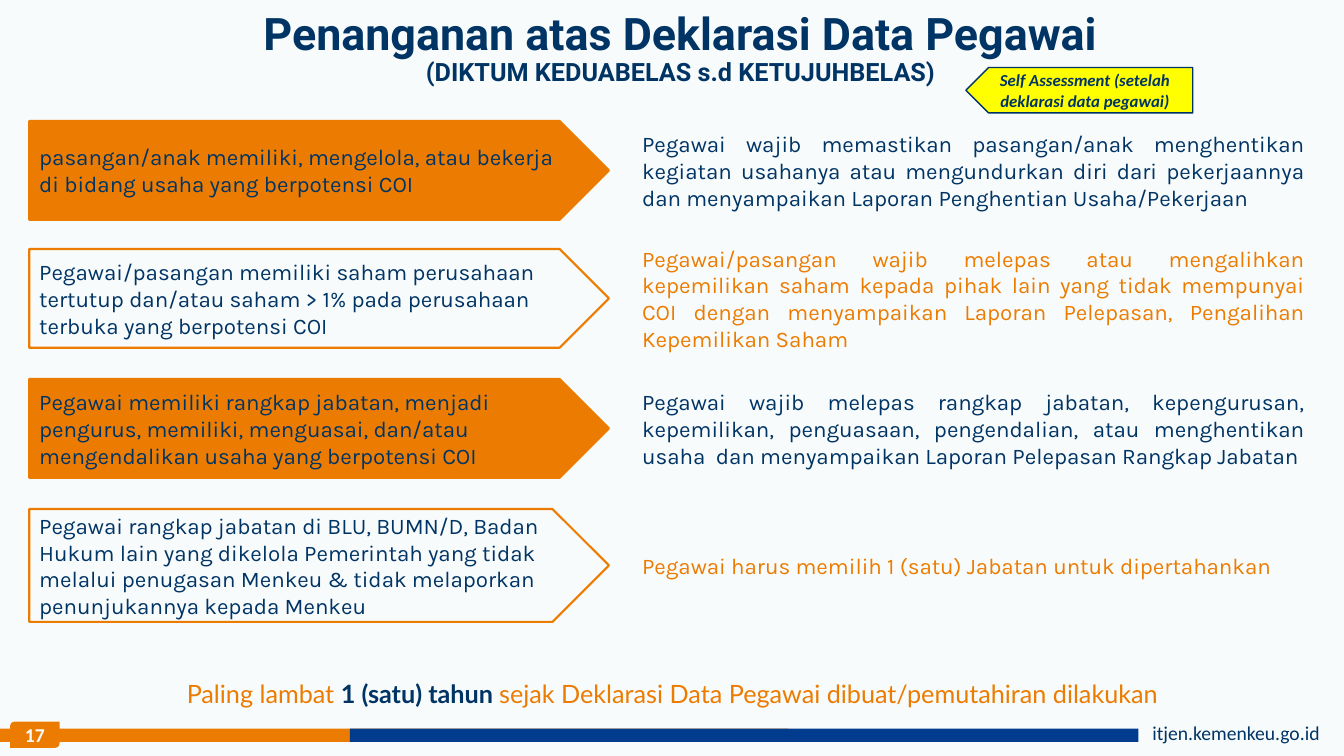
import pptx
import pptx.util
import pptx.dml.color
import pptx.enum.shapes
import pptx.enum.text
import pptx.oxml.ns

Inches = pptx.util.Inches
RGBColor = pptx.dml.color.RGBColor
SHAPES = pptx.enum.shapes.MSO_SHAPE
ALIGN = pptx.enum.text.PP_ALIGN
ANCHOR = pptx.enum.text.MSO_ANCHOR

NAVY = RGBColor(0x00, 0x34, 0x65)
BLUE = RGBColor(0x00, 0x3C, 0x8E)
ORANGE = RGBColor(0xEC, 0x7C, 0x01)
YELLOW = RGBColor(0xFF, 0xFF, 0x00)
PALE = RGBColor(0xF8, 0xFB, 0xFB)

BODY = {"name": "Karla", "size": 16, "color": NAVY}
TITLE = {"name": "Roboto", "size": 32, "color": NAVY, "bold": True}
CLOSING = {"name": "Lato", "size": 18, "color": ORANGE}
FOOTER = {"name": "Calibri", "size": 14, "color": NAVY}
BADGE = FOOTER | {"color": PALE, "bold": True}
CALLOUT = FOOTER | {"size": 12, "bold": True, "italic": True}

# Top, height, condition, required action, action alignment
CASES = [
    (1.2, 0.98,
     "pasangan/anak memiliki, mengelola, atau bekerja di bidang usaha yang berpotensi COI",
     "Pegawai wajib memastikan pasangan/anak menghentikan kegiatan usahanya atau "
     "mengundurkan diri dari pekerjaannya dan menyampaikan Laporan Penghentian "
     "Usaha/Pekerjaan", ALIGN.JUSTIFY),
    (2.47, 0.98,
     "Pegawai/pasangan memiliki saham perusahaan tertutup dan/atau saham > 1% pada "
     "perusahaan terbuka yang berpotensi COI",
     "Pegawai/pasangan wajib melepas atau mengalihkan kepemilikan saham kepada pihak "
     "lain yang tidak mempunyai COI dengan menyampaikan Laporan Pelepasan, Pengalihan "
     "Kepemilikan Saham", ALIGN.JUSTIFY),
    (3.76, 0.98,
     "Pegawai memiliki rangkap jabatan, menjadi pengurus, memiliki, menguasai, dan/atau "
     "mengendalikan usaha yang berpotensi COI",
     "Pegawai wajib melepas rangkap jabatan, kepengurusan, kepemilikan, penguasaan, "
     "pengendalian, atau menghentikan usaha  dan menyampaikan Laporan Pelepasan "
     "Rangkap Jabatan", ALIGN.JUSTIFY),
    (5.05, 1.12,
     "Pegawai rangkap jabatan di BLU, BUMN/D, Badan Hukum lain yang dikelola Pemerintah "
     "yang tidak melalui penugasan Menkeu & tidak melaporkan penunjukannya kepada Menkeu",
     "Pegawai harus memilih 1 (satu) Jabatan untuk dipertahankan", ALIGN.LEFT),
]


def write_text(shape, runs, align=ALIGN.LEFT, anchor=ANCHOR.MIDDLE, wrap=True):
    """Fill the first paragraph of a shape with (text, format) runs."""
    frame = shape.text_frame
    frame.word_wrap = wrap
    frame.auto_size = pptx.enum.text.MSO_AUTO_SIZE.NONE
    frame.vertical_anchor = anchor
    paragraph = frame.paragraphs[0]
    paragraph.alignment = align
    for text, text_format in runs:
        if text == "\n":
            paragraph.add_line_break()
            continue
        run = paragraph.add_run()
        run.text = text
        for key, value in text_format.items():
            if key == "color":
                run.font.color.rgb = value
            else:
                setattr(run.font, key, pptx.util.Pt(value) if key == "size" else value)
    return paragraph


def add_shape(slide, kind, box, fill=None, line=None, line_width=1.5):
    shape = slide.shapes.add_shape(kind, *map(Inches, box))
    shape.shadow.inherit = False
    if fill is None:
        shape.fill.background()
    else:
        shape.fill.solid()
        shape.fill.fore_color.rgb = fill
    if line is None:
        shape.line.fill.background()
    else:
        shape.line.color.rgb = line
        shape.line.width = pptx.util.Pt(line_width)
    return shape


def add_text(slide, box, runs, **options):
    return write_text(slide.shapes.add_textbox(*map(Inches, box)), runs, **options)


def build_footer(slide, left, top, width):
    # Two overlapping bars, page badge and web address
    bar_width, bar_top = 7.82, top + 0.07
    for offset, color in ((0, ORANGE), (3.47, BLUE)):
        add_shape(slide, SHAPES.RECTANGLE, (left + offset, bar_top, bar_width, 0.13), color)
    add_text(slide, (left + width - 2, top - 0.06, 1.91, 0.33),
             [("itjen.kemenkeu.go.id", FOOTER)], anchor=ANCHOR.TOP, wrap=False)
    badge = add_shape(slide, SHAPES.ROUND_2_DIAG_RECTANGLE,
                      (left + 0.1, top, 0.49, 0.26), ORANGE)
    for side, inset in {"left": 0.04, "top": 0, "right": 0.04, "bottom": 0}.items():
        setattr(badge.text_frame, f"margin_{side}", Inches(inset))
    write_text(badge, [("17", BADGE)], ALIGN.CENTER)


def build_title(slide, left, top, width, height):
    title = slide.shapes.title
    title.left, title.top, title.width, title.height = map(
        Inches, (left, top, width, height))
    paragraph = write_text(title, [
        ("Penanganan atas Deklarasi Data Pegawai", TITLE),
        ("\n", None),
        ("(DIKTUM KEDUABELAS s.d KETUJUHBELAS)", TITLE | {"size": 18}),
    ], ALIGN.CENTER)
    paragraph.line_spacing = 0.9


def build_case(slide, left, top, width, height, condition, action, align, filled):
    # Condition arrow on the left, required action on the right
    arrow_width, action_offset = 5.75, 5.98
    arrow = add_shape(slide, SHAPES.PENTAGON, (left, top, arrow_width, height),
                      ORANGE if filled else None, ORANGE)
    write_text(arrow, [(condition, BODY)])
    add_text(slide, (left + action_offset, top, width - action_offset, height),
             [(action, BODY | {"color": NAVY if filled else ORANGE})], align=align)


def build_callout(slide, left, top, width, height):
    callout = add_shape(slide, SHAPES.PENTAGON, (left, top, width, height), YELLOW, NAVY, 1)
    callout.element.spPr.find(pptx.oxml.ns.qn("a:xfrm")).set("flipH", "1")
    write_text(callout, [("Self Assessment (setelah deklarasi data pegawai)", CALLOUT)],
               ALIGN.CENTER)


def build_closing(slide, left, top, width, height):
    add_text(slide, (left, top, width, height), [
        ("Paling lambat ", CLOSING),
        ("1 (satu) tahun ", CLOSING | {"color": NAVY, "bold": True}),
        ("sejak Deklarasi Data Pegawai dibuat/pemutahiran dilakukan", CLOSING),
    ], align=ALIGN.CENTER, anchor=ANCHOR.TOP)


def main():
    presentation = pptx.Presentation()
    presentation.slide_width = Inches(13.33)
    presentation.slide_height = Inches(7.5)
    slide = presentation.slides.add_slide(presentation.slide_layouts[5])
    slide.background.fill.solid()
    slide.background.fill.fore_color.rgb = PALE

    build_footer(slide, 0, 7.16, 13.33)
    build_title(slide, 1.85, 0, 9.8, 0.98)
    for index, (top, height, condition, action, align) in enumerate(CASES):
        build_case(slide, 0.29, top, 12.75, height, condition, action, align,
                   filled=index % 2 == 0)
    build_closing(slide, 0.98, 6.68, 11.38, 0.4)
    build_callout(slide, 9.58, 0.67, 2.25, 0.45)
    presentation.save("out.pptx")


if __name__ == "__main__":
    main()
